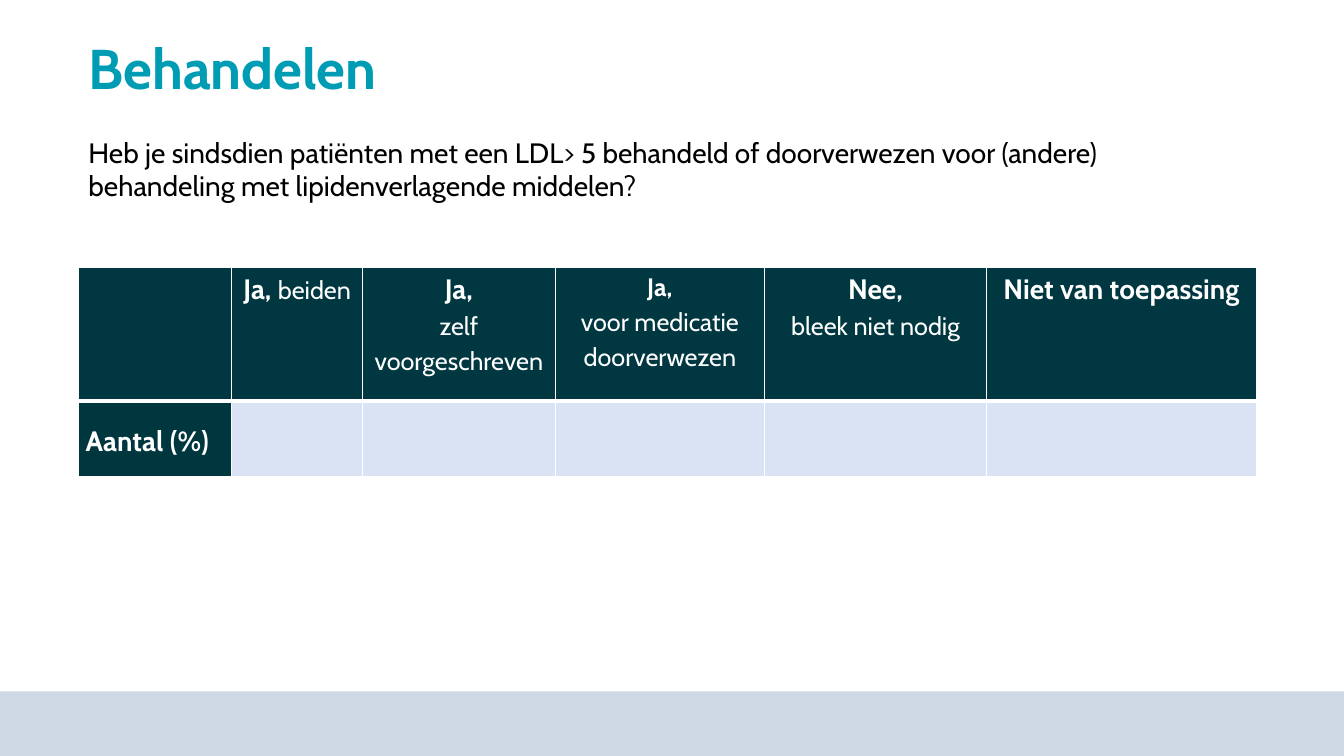
from lxml.etree import fromstring
from pptx import Presentation
from pptx.dml.color import RGBColor
from pptx.enum.shapes import MSO_SHAPE
from pptx.enum.text import MSO_ANCHOR as ANCHOR, PP_ALIGN as ALIGN
from pptx.oxml.ns import nsdecls
from pptx.util import Cm, Pt

TEAL = RGBColor(0x00, 0x9C, 0xB4)
DARK = RGBColor(0x00, 0x37, 0x41)
LABEL_DARK = RGBColor(0x00, 0x37, 0x3E)
PALE = RGBColor(0xDA, 0xE3, 0xF3)
BAND = RGBColor(0xCE, 0xD9, 0xE5)
WHITE = RGBColor(0xFF, 0xFF, 0xFF)
BLACK = RGBColor(0x00, 0x00, 0x00)


def add_run(paragraph, text, size, color, bold=False):
    run = paragraph.add_run()
    run.text = text
    run.font.name = "Cabin"
    run.font.size = Pt(size)
    run.font.bold = bold
    run.font.color.rgb = color


def style_cell(cell, color, top, bottom):
    cell.fill.solid()
    cell.fill.fore_color.rgb = color
    cell.margin_left = cell.margin_right = Cm(0.18)
    cell.margin_top = cell.margin_bottom = 0
    properties = cell._tc.get_or_add_tcPr()
    borders = (("L", 1), ("R", 1), ("T", top), ("B", bottom))
    for position, (side, width) in enumerate(borders):
        properties.insert(position, fromstring(
            f'<a:ln{side} {nsdecls("a")} w="{Pt(width)}"><a:solidFill>'
            f'<a:srgbClr val="{WHITE}"/></a:solidFill></a:ln{side}>'))


prs = Presentation()
prs.slide_width, prs.slide_height = Cm(33.87), Cm(19.05)
slide = prs.slides.add_slide(prs.slide_layouts[6])

# Footer band
footer = slide.shapes.add_shape(MSO_SHAPE.RECTANGLE, 0, Cm(17.42), prs.slide_width, Cm(1.63))
footer.shadow.inherit = False
footer.fill.solid()
footer.fill.fore_color.rgb = BAND
footer.line.fill.background()

# Title
title = slide.shapes.add_textbox(Cm(1.98), Cm(0.91), Cm(27.13), Cm(1.8)).text_frame
title.word_wrap = True
title.vertical_anchor = ANCHOR.MIDDLE
title.paragraphs[0].line_spacing = 0.9
add_run(title.paragraphs[0], "Behandelen", 40, TEAL, True)

# Question
question = slide.shapes.add_textbox(Cm(1.98), Cm(2.41), Cm(27.81), Cm(2.82)).text_frame
question.word_wrap = True
question.vertical_anchor = ANCHOR.BOTTOM
add_run(question.paragraphs[0],
        "Heb je sindsdien patiënten met een LDL> 5 behandeld of doorverwezen voor (andere) "
        "behandeling met lipidenverlagende middelen?", 20, BLACK)

# Answer table: each header is a list of paragraphs of (text, size, bold) runs
column_widths = [3.86, 3.3, 4.85, 5.28, 5.59, 6.81]
row_heights = [3.38, 1.9]
headers = [
    [],
    [[("Ja, ", 20, True), ("beiden", 18, False)]],
    [[("Ja,", 20, True)], [("zelf voorgeschreven", 18, False)]],
    [[("Ja,", 18, True)], [("voor medicatie doorverwezen", 18, False)]],
    [[("Nee,", 20, True)], [("bleek niet nodig", 18, False)]],
    [[("Niet van toepassing", 20, True)]],
]
answers = slide.shapes.add_table(
    len(row_heights), len(column_widths), Cm(1.98), Cm(6.73),
    Cm(sum(column_widths)), Cm(sum(row_heights))).table
for row, height in zip(answers.rows, row_heights):
    row.height = Cm(height)

for column, (width, header) in enumerate(zip(column_widths, headers)):
    answers.columns[column].width = Cm(width)
    header_cell = answers.cell(0, column)
    style_cell(header_cell, DARK, 1, 3)
    style_cell(answers.cell(1, column), PALE if column else LABEL_DARK, 3, 1)
    for index, runs in enumerate(header):
        frame = header_cell.text_frame
        paragraph = frame.add_paragraph() if index else frame.paragraphs[0]
        paragraph.alignment = ALIGN.CENTER
        paragraph.line_spacing = 1.15
        for text, size, bold in runs:
            add_run(paragraph, text, size, WHITE, bold)

# Row label
count_label = answers.cell(1, 0)
count_label.vertical_anchor = ANCHOR.MIDDLE
count_label.text_frame.paragraphs[0].line_spacing = 1.15
add_run(count_label.text_frame.paragraphs[0], "Aantal (%)", 20, WHITE, True)

prs.save("out.pptx")
